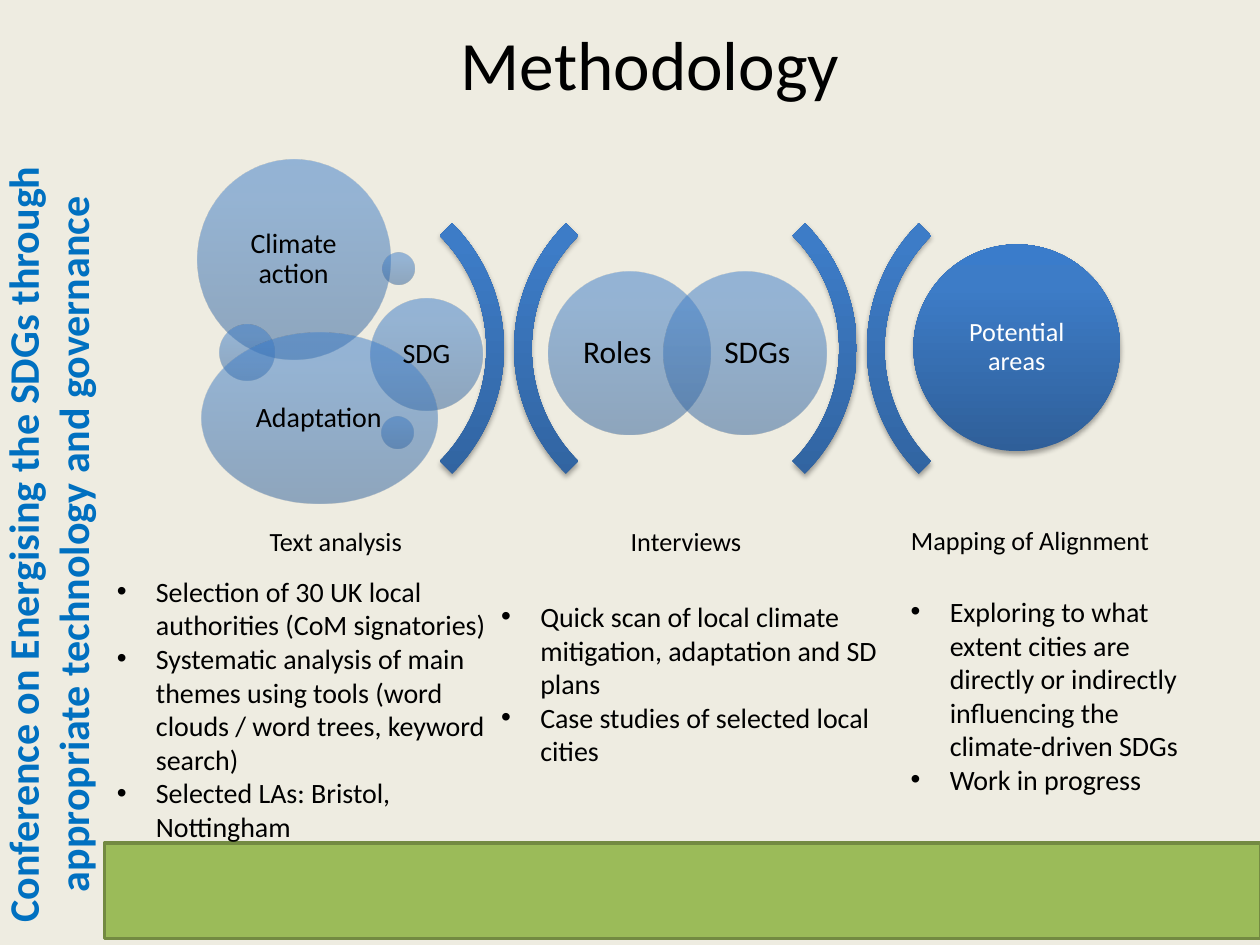
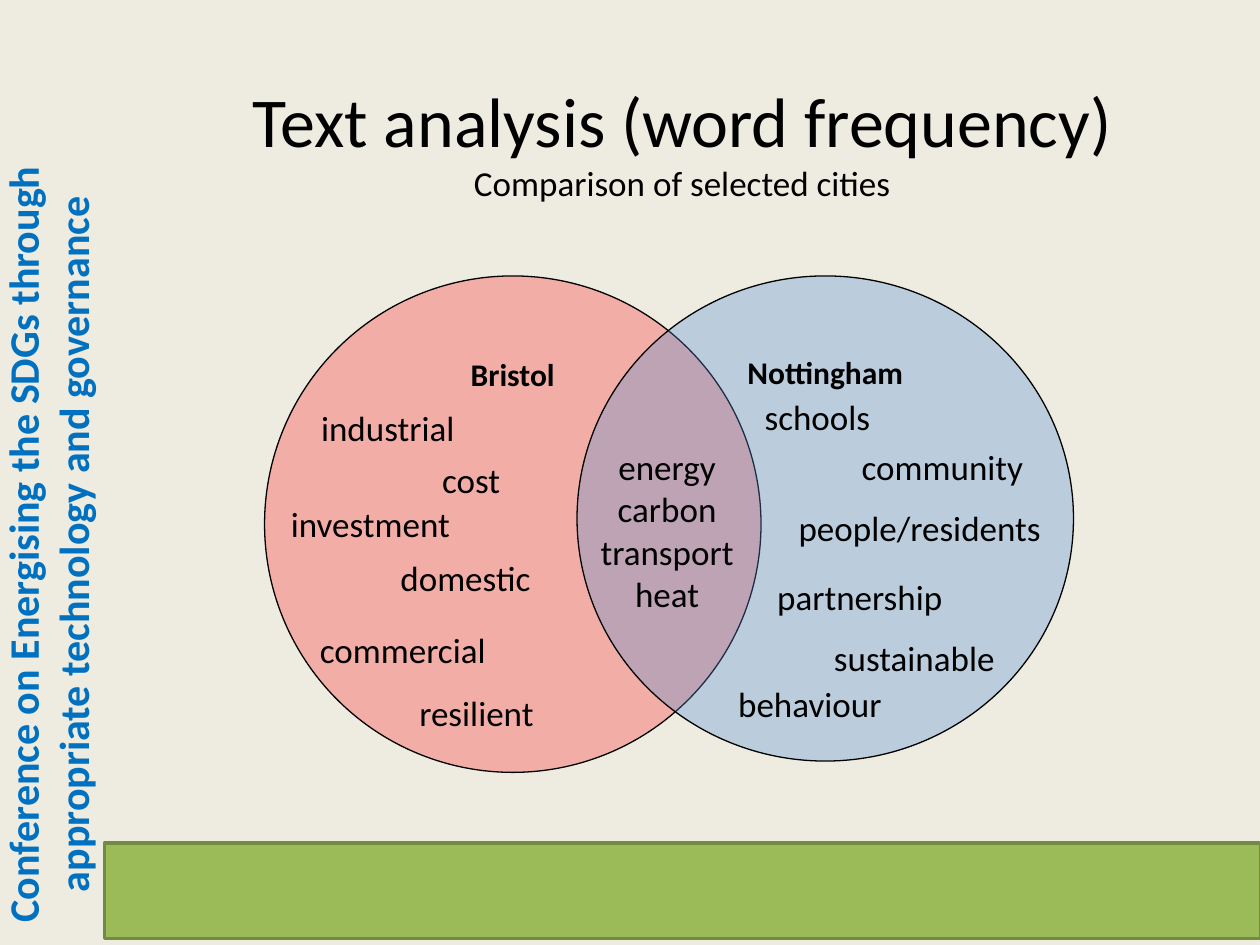
from pptx import Presentation
from pptx import util as u
from pptx import oxml
from pptx.dml import color as dml
from pptx.enum import shapes, text
from pptx.oxml import ns
from lxml import etree

FONT = "Calibri"
COLORS = {
    "paper": "EEECE1", "ink": "000000", "white": "FFFFFF", "strapline": "0070C0",
    "band": "9BBB59", "band_edge": "738A42",
    "deep": "2F5F99", "mid": "3D7CC7", "light": "3A7CCB",
    "bristol": "FF0000", "nottingham": "558ED5",
}
RGB = {name: dml.RGBColor.from_string(value) for name, value in COLORS.items()}
SHAPE, ALIGN, ANCHOR = shapes.MSO_SHAPE, text.PP_ALIGN, text.MSO_ANCHOR

deck = Presentation()
deck.slide_width, deck.slide_height = u.Inches(10), u.Inches(7.5)
COLUMN, ROW = deck.slide_width // 100, deck.slide_height // 75


def grid(left, top, width, height):
    """Turn columns and rows (100 x 75 to the slide) into lengths."""
    return [int(n * unit) for n, unit in
            zip((left, top, width, height), (COLUMN, ROW, COLUMN, ROW))]


def write(box, lines, size, color="ink", bold=False, align=ALIGN.CENTER,
          anchor=ANCHOR.TOP, inset=None, spacing=None, bullet=False):
    """Fill a box with one paragraph per line."""
    frame = box.text_frame
    frame.word_wrap = True
    frame.vertical_anchor = anchor
    if inset is not None:
        frame.margin_left = frame.margin_right = u.Inches(inset)
        frame.margin_top = frame.margin_bottom = u.Inches(inset)
    for number, line in enumerate(lines):
        para = frame.add_paragraph() if number else frame.paragraphs[0]
        para.alignment = align
        if spacing:
            para.line_spacing = spacing
        if bullet:
            props = para._p.get_or_add_pPr()
            props.set("marL", str(u.Inches(0.31)))
            props.set("indent", str(-u.Inches(0.31)))
            etree.SubElement(props, ns.qn("a:buFont"), typeface="Arial")
            etree.SubElement(props, ns.qn("a:buChar"), char="•")
        span = para.add_run()
        span.text = line
        span.font.name, span.font.size, span.font.bold = FONT, u.Pt(size), bold
        span.font.color.rgb = RGB[color]


# Shared frame: background, side strapline, green band, title
pages = []
for title, area, size in [
    ("Methodology", (9.2, 1.8, 84.8, 6.4), 39.6),
    ("Text analysis (word frequency)", (8.3, 3.9, 91.7, 14.5), 40),
]:
    page = deck.slides.add_slide(deck.slide_layouts[6])
    page.background.fill.solid()
    page.background.fill.fore_color.rgb = RGB["paper"]

    strapline = page.shapes.add_textbox(*grid(-27.6, 39.4, 62.7, 7.6))
    strapline.rotation = 270
    write(strapline, ["Conference on Energising the SDGs through "
                      "appropriate technology and governance"],
          24, "strapline", bold=True, anchor=ANCHOR.MIDDLE)

    band = page.shapes.add_shape(SHAPE.RECTANGLE, *grid(8.3, 66.9, 91.8, 7.6))
    band.shadow.inherit = False
    band.fill.solid()
    band.fill.fore_color.rgb = RGB["band"]
    band.line.color.rgb = RGB["band_edge"]
    band.line.width = u.Pt(2)

    heading = page.shapes.add_textbox(*grid(*area))
    write(heading, [title], size, anchor=ANCHOR.MIDDLE)
    pages.append((page, heading))

# Slide 1: bullets below each stage
page, heading = pages[0]
stage_notes = [
    ((38.8, 47.1, 32.3, 14.5),
     ["Quick scan of local climate mitigation, adaptation and SD plans",
      "Case studies of selected local cities"]),
    ((8.3, 45.1, 32.3, 22.6),
     ["Selection of 30 UK local authorities (CoM signatories)",
      "Systematic analysis of main themes using tools (word clouds / word trees, "
      "keyword search)",
      "Selected LAs: Bristol, Nottingham"]),
    ((71.3, 46.7, 25.6, 17.2),
     ["Exploring to what extent cities are directly or indirectly influencing "
      "the climate-driven SDGs",
      "Work in progress"]),
]
for area, notes in stage_notes:
    write(page.shapes.add_textbox(*grid(*area)), notes, 16,
          align=ALIGN.LEFT, bullet=True)

# Slide 1: brackets and circles, as (preset, area, rotation, see-through)
brackets = [(SHAPE.BLOCK_ARC, (left, 13.6, 28.1, 28.1), turn, False)
            for left, turn in [(11.9, 90), (40.8, 270), (39.9, 90), (68.8, 270)]]
circles = [(SHAPE.OVAL, area, 0, True) for area in [
    (43.5, 21.6, 12.9, 12.9), (52.7, 21.6, 12.9, 12.9),
    (15.7, 12.7, 15.3, 15.8), (17.4, 25.8, 4.4, 4.4), (30.4, 20.1, 2.5, 2.5),
    (29.4, 23.7, 8.9, 8.9), (30.3, 33.1, 2.5, 2.5), (16, 26.4, 18.7, 13.6)]]
result = [(SHAPE.OVAL, (72.5, 19.4, 16.4, 16.4), 0, False)]

for preset, area, turn, see_through in brackets + circles + result:
    figure = page.shapes.add_shape(preset, *grid(*area))
    figure.rotation = turn
    if preset == SHAPE.BLOCK_ARC:
        for index, value in enumerate((135, 189, 0.05)):
            figure.adjustments[index] = value
    figure.line.fill.background()
    figure.shadow.inherit = False
    alpha = '<a:alpha val="50000"/>' if see_through else ""
    stops = "".join(
        f'<a:gs pos="{place * 1000}"><a:srgbClr val="{COLORS[name]}">{alpha}</a:srgbClr></a:gs>'
        for place, name in [(0, "deep"), (80, "mid"), (100, "light")])
    gradient = oxml.parse_xml(
        f'<a:gradFill {ns.nsdecls("a")} rotWithShape="0"><a:gsLst>{stops}</a:gsLst>'
        '<a:lin ang="16200000" scaled="0"/></a:gradFill>')
    props = figure._element.spPr
    props.find(ns.qn("a:prstGeom")).addnext(gradient)
    if not see_through:
        props.find(ns.qn("a:effectLst")).append(oxml.parse_xml(
            f'<a:outerShdw {ns.nsdecls("a")} blurRad="{u.Pt(3.1)}" dist="{u.Pt(1.8)}" '
            'dir="5400000" rotWithShape="0"><a:srgbClr val="000000">'
            '<a:alpha val="35000"/></a:srgbClr></a:outerShdw>'))

# Slide 1: labels in the circles and stage names
for label, area, size, inset, color in [
    ("Roles", (45.3, 23.1, 7.4, 9.8), 18, 0, "ink"),
    ("SDGs", (56.4, 23.1, 7.4, 9.8), 18, 0, "ink"),
    ("Climate action", (17.9, 15, 10.8, 11.2), 16, 0.07, "ink"),
    ("SDG", (30.7, 25, 6.3, 6.3), 16, 0.07, "ink"),
    ("Adaptation", (18.7, 28.4, 13.2, 9.6), 16, 0.07, "ink"),
    ("Potential areas", (74.9, 21.8, 11.6, 11.6), 15, 0.06, "white"),
    ("Text analysis", (16, 40.3, 21.3, 5.6), 15, 0.06, "ink"),
    ("Interviews", (43.8, 40.3, 21.3, 5.6), 15, 0.06, "ink"),
    ("Mapping of Alignment", (71.1, 40.2, 21.3, 5.6), 15, 0.06, "ink"),
]:
    write(page.shapes.add_textbox(*grid(*area)), [label], size, color,
          anchor=ANCHOR.MIDDLE, inset=inset, spacing=0.9)

# Slide 2: subtitle under the title
page, heading = pages[1]
para = heading.text_frame.paragraphs[0]
para.add_line_break()
span = para.add_run()
span.text = "Comparison of selected cities"
span.font.name, span.font.size = FONT, u.Pt(20)
span.font.color.rgb = RGB["ink"]

# Slide 2: the two overlapping cities
for city, area, color, opacity in [
    ("Bristol", (21, 21.9, 39.4, 39.4), "bristol", 26),
    ("Nottingham", (45.8, 21.9, 39.4, 38.5), "nottingham", 33),
]:
    circle = page.shapes.add_shape(SHAPE.OVAL, *grid(*area))
    circle.shadow.inherit = False
    circle.fill.solid()
    circle.fill.fore_color.rgb = RGB[color]
    tint = circle._element.spPr.find(ns.qn("a:solidFill"))[0]
    etree.SubElement(tint, ns.qn("a:alpha"), val=str(opacity * 1000))
    circle.line.color.rgb = RGB["ink"]
    circle.line.width = u.Pt(0.75)
    write(circle, [city], 18, bold=True)

# Slide 2: shared words, then the words of each city
write(page.shapes.add_textbox(*grid(46.6, 34.9, 12.7, 14.5)),
      ["energy", "carbon", "transport", "heat"], 20)
for word, left, top, width in [
    ("industrial", 24.5, 31.8, 23.6),
    ("cost", 34.1, 35.9, 8.1),
    ("investment", 22.1, 39.4, 15.7),
    ("domestic", 30.8, 43.7, 15.7),
    ("commercial", 24.4, 49.4, 15.7),
    ("resilient", 32.3, 54.4, 15.7),
    ("schools", 59.7, 30.9, 12.7),
    ("community", 67.4, 34.9, 15.6),
    ("people/residents", 62.4, 39.7, 22),
    ("partnership", 60.7, 45.2, 15.6),
    ("sustainable", 65.2, 50, 18.1),
    ("behaviour", 57.6, 53.7, 18.1),
]:
    write(page.shapes.add_textbox(*grid(left, top, width, 4.4)), [word], 20,
          align=ALIGN.LEFT)

deck.save("out.pptx")
